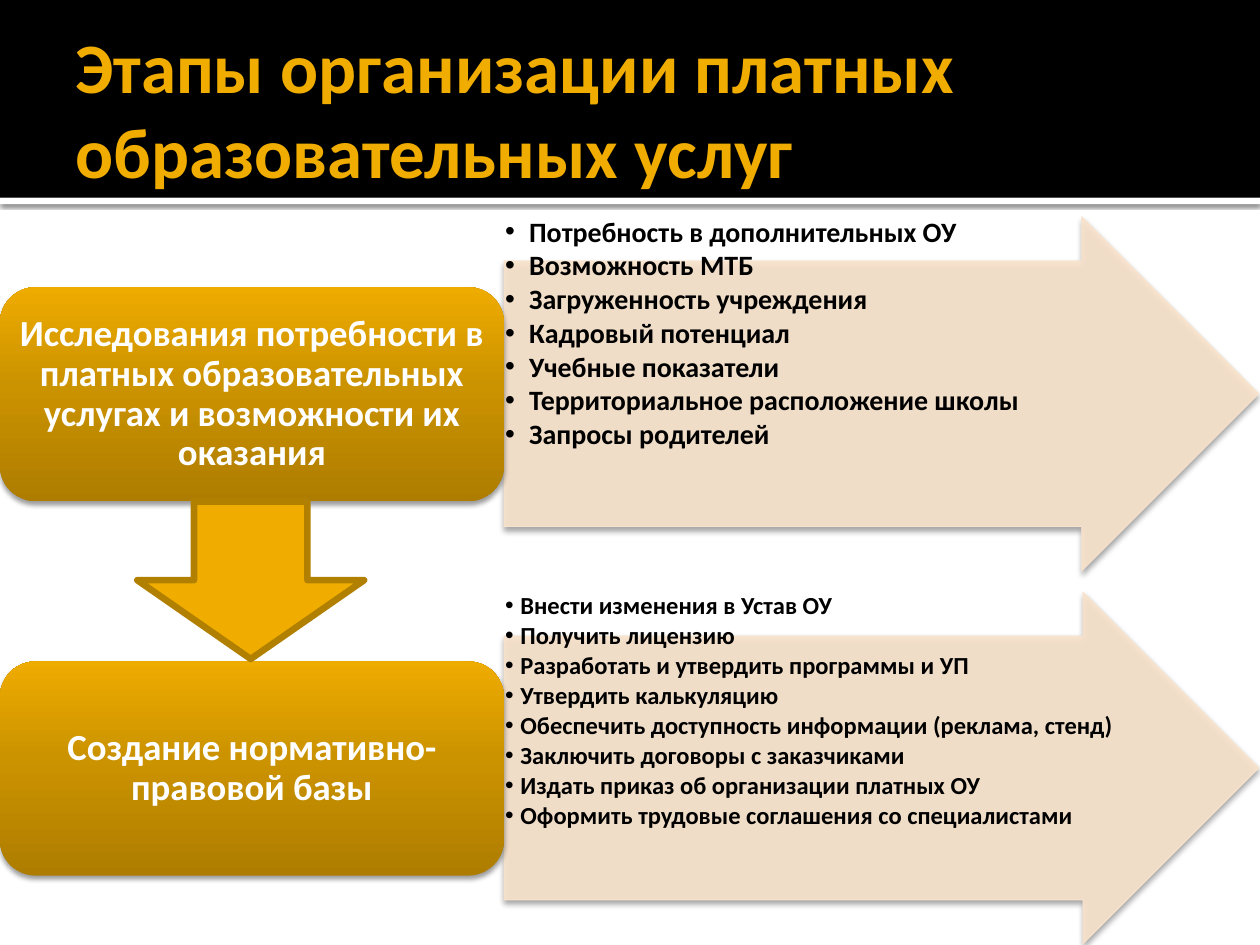
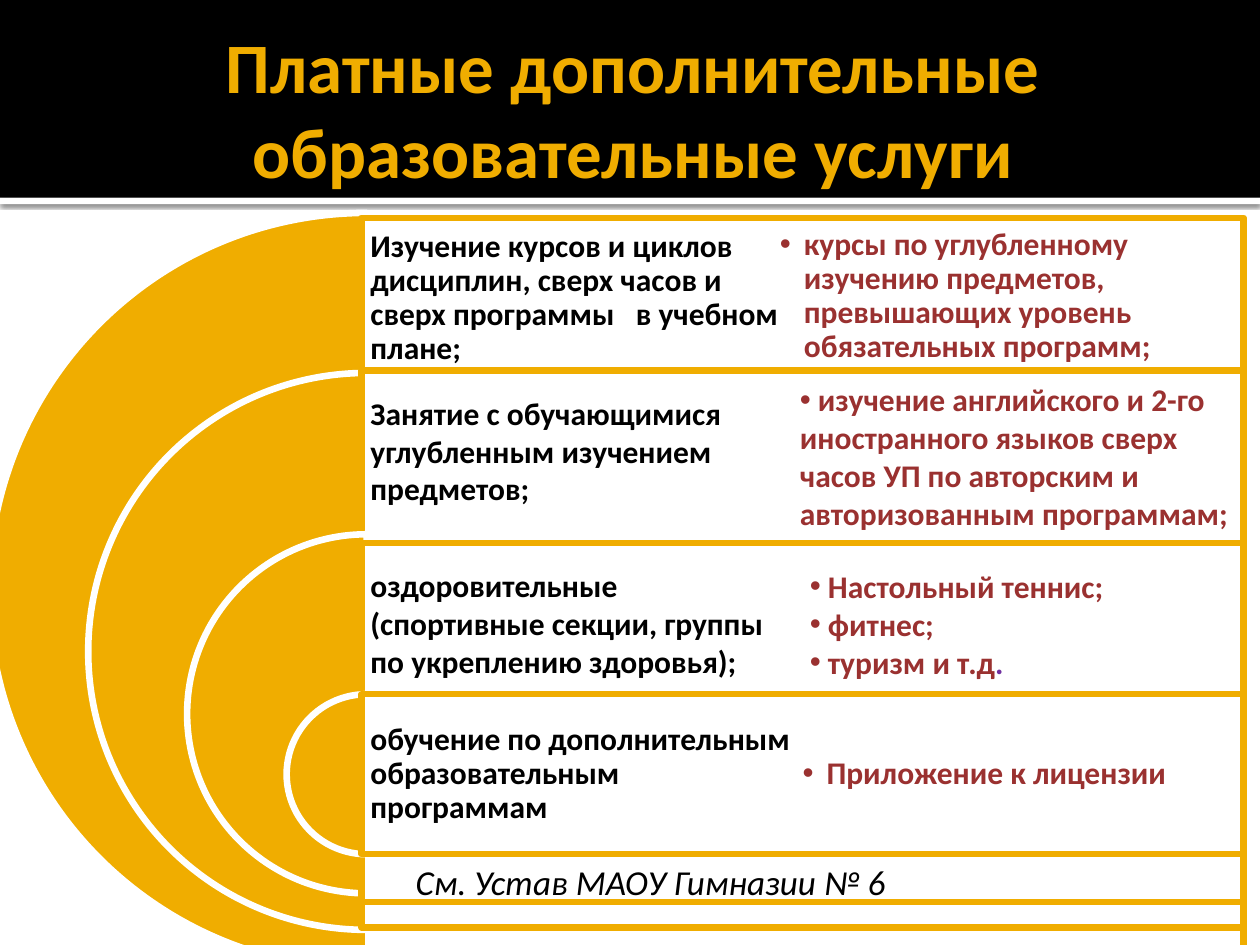
from copy import deepcopy
from lxml.etree import SubElement
from pptx import Presentation
from pptx.dml.color import RGBColor
from pptx.enum.shapes import MSO_SHAPE
from pptx.enum.text import MSO_ANCHOR, PP_ALIGN
from pptx.oxml.ns import qn
from pptx.util import Inches, Pt

GOLD, WHITE, BLACK = "F0AD00", "FFFFFF", "000000"
SAND, RED, PURPLE = "F9E3CC", "9A3130", "7030A0"
SHADE = [(0, "AE7D00"), (0.55, "CC9300"), (1, "EEAB00")]
SOFT = (38, 3.1, 2)
LEFT, MID = PP_ALIGN.LEFT, PP_ALIGN.CENTER
color = RGBColor.from_string


def draw(slide, kind, box, fill, line=None, width=3.78, alpha=None, shadow=None):
    """Add a shape; a list as fill is a gradient, shadow is (alpha, blur, distance)."""
    shape = slide.shapes.add_shape(kind, *map(Inches, box))
    props = shape._element.spPr
    if isinstance(fill, list):
        shape.fill.gradient()
        shape.fill.gradient_angle = 90
        stops = props.find(".//" + qn("a:gsLst"))
        stops.insert(1, deepcopy(stops[0]))
        for stop, (place, tone) in zip(shape.fill.gradient_stops, fill):
            stop.position = place
            stop.color.rgb = color(tone)
    else:
        shape.fill.solid()
        shape.fill.fore_color.rgb = color(fill)
    if alpha:
        tint = props.find(qn("a:solidFill"))[0]
        SubElement(tint, qn("a:alpha"), val=str(alpha * 1000))
    if line:
        shape.line.color.rgb = color(line)
        shape.line.width = Pt(width)
    else:
        shape.line.fill.background()
    shape.shadow.inherit = False
    if shadow:
        dark, blur, dist = shadow
        outer = SubElement(props.find(qn("a:effectLst")), qn("a:outerShdw"),
                           blurRad=str(Pt(blur)), dist=str(Pt(dist)),
                           dir="5400000", algn="ctr", rotWithShape="0")
        tint = SubElement(outer, qn("a:srgbClr"), val=BLACK)
        SubElement(tint, qn("a:alpha"), val=str(dark * 1000))
    return shape


def write(slide, box, lines, size, tone, bold=True, align=LEFT, middle=False,
          inset=(0.1, 0.05, 0.1, 0.05), spacing=None, after=0, bullet=None):
    """Add a text box; bullet is the hanging indent in inches."""
    frame = slide.shapes.add_textbox(*map(Inches, box)).text_frame
    frame.word_wrap = True
    frame.vertical_anchor = MSO_ANCHOR.MIDDLE if middle else MSO_ANCHOR.TOP
    (frame.margin_left, frame.margin_top,
     frame.margin_right, frame.margin_bottom) = map(Inches, inset)
    for i, line in enumerate(lines):
        para = frame.add_paragraph() if i else frame.paragraphs[0]
        para.add_run().text = line
        para.alignment = align
        para.space_after = Pt(after)
        if spacing:
            para.line_spacing = spacing
        if bullet is not None:
            props = para._p.get_or_add_pPr()
            props.set("marL", str(Inches(bullet)))
            props.set("indent", str(-Inches(bullet)))
            SubElement(props, qn("a:buFont"), typeface="Arial")
            SubElement(props, qn("a:buChar"), char="•")
        font = para.font
        font.name, font.size, font.bold = "Calibri", Pt(size), bold
        font.color.rgb = color(tone)
    return frame


deck = Presentation()
deck.slide_width, deck.slide_height = Inches(10), Inches(7.5)

# Shared header
slides = []
for title, align in [("Этапы организации платных образовательных услуг", LEFT),
                     ("Платные дополнительные образовательные услуги", MID)]:
    slide = deck.slides.add_slide(deck.slide_layouts[6])
    draw(slide, MSO_SHAPE.RECTANGLE, (0, 1.57, 10, 0.05), WHITE, shadow=(60, 2.5, 0.8))
    draw(slide, MSO_SHAPE.RECTANGLE, (0, 0, 10, 1.57), BLACK)
    write(slide, (0.5, 0.17, 9, 1.37), [title], 40.5, GOLD, align=align,
          middle=True, inset=(0.1, 0.05, 0.05, 0.05))
    slides.append(slide)
stages, kinds = slides

# Slide 1: stages, each a box with an arrow of tasks
steps = [
    (1.72, 2.28, 2.81, 16, 0.19,
     "Исследования потребности в платных образовательных услугах и возможности их оказания",
     ["Потребность в дополнительных ОУ", "Возможность МТБ",
      "Загруженность учреждения", "Кадровый потенциал", "Учебные показатели",
      "Территориальное расположение школы", "Запросы родителей"]),
    (4.7, 5.25, 2.79, 14, 0.12,
     "Создание нормативно-правовой базы",
     ["Внести изменения в Устав ОУ", "Получить лицензию",
      "Разработать и утвердить программы и УП", "Утвердить калькуляцию",
      "Обеспечить доступность информации (реклама, стенд)",
      "Заключить договоры с заказчиками",
      "Издать приказ об организации платных ОУ",
      "Оформить трудовые соглашения со специалистами"]),
]
for top, y, high, size, hang, name, tasks in steps:
    area = (4, top, 5.99, high)
    arrow = draw(stages, MSO_SHAPE.RIGHT_ARROW, area, SAND, SAND, 0.5, 90, SOFT)
    arrow.adjustments[0] = 0.75
    write(stages, area, tasks, size, BLACK, inset=[0.01] * 4,
          spacing=0.9, after=2, bullet=hang)
    area = (0, y, 4, 1.7)
    draw(stages, MSO_SHAPE.ROUNDED_RECTANGLE, area, SHADE, shadow=SOFT)
    write(stages, area, [name], 21, WHITE, align=MID, middle=True,
          inset=(0.09, 0.04, 0.09, 0.04), spacing=0.9)
draw(stages, MSO_SHAPE.DOWN_ARROW, (1.09, 3.98, 1.8, 1.25), GOLD, "B28000")

# Slide 2: nested half discs, each with a framed row
rows = [
    (1.69, 1.73, 6, 0.9,
     "Изучение курсов и циклов дисциплин, сверх часов и сверх программы   в учебном плане;"),
    (2.96, 2.94, 4.42, None,
     "Занятие с обучающимися углубленным изучением предметов;"),
    (4.24, 4.31, 2.85, None,
     "оздоровительные (спортивные секции, группы по укреплению здоровья);"),
    (5.51, 5.51, 1.27, 0.9,
     "обучение по дополнительным образовательным программам"),
]
pad = [0.07] * 4
for top, y, size, gap, name in rows:
    disc = draw(kinds, MSO_SHAPE.PIE, (2.91 - size / 2, top, size, size), GOLD, WHITE)
    disc.adjustments[0], disc.adjustments[1] = 54, 162
    draw(kinds, MSO_SHAPE.RECTANGLE, (2.87, y, 7, size), WHITE, GOLD, alpha=90)
    write(kinds, (2.87, y, 3.5, 1.27), [name], 18, BLACK,
          middle=True, inset=pad, spacing=gap)

for area, note in [
    ((6.12, 1.72, 3.88, 1.27),
     "курсы по углубленному изучению предметов, превышающих уровень обязательных программ;"),
    ((6.3, 5.51, 3.5, 1.27), "Приложение к лицензии"),
]:
    write(kinds, area, [note], 18, RED, middle=True, inset=pad, spacing=0.9, bullet=0.19)

write(kinds, (6.25, 2.97, 3.75, 1.31),
      [" изучение английского и 2-го иностранного языков сверх часов УП "
       "по авторским и авторизованным программам;"], 18, RED, bullet=0)
sport = write(kinds, (6.33, 4.45, 3.13, 1.01),
              [" Настольный теннис;", " фитнес;", " туризм и т.д"], 18, RED, bullet=0)
stop = sport.paragraphs[-1].add_run()
stop.text = "."
stop.font.color.rgb = color(PURPLE)
source = write(kinds, (3.2, 6.78, 6.17, 0.44), ["См. Устав МАОУ Гимназии № 6"],
               20, BLACK, bold=False)
source.paragraphs[0].font.italic = True

deck.save("out.pptx")
